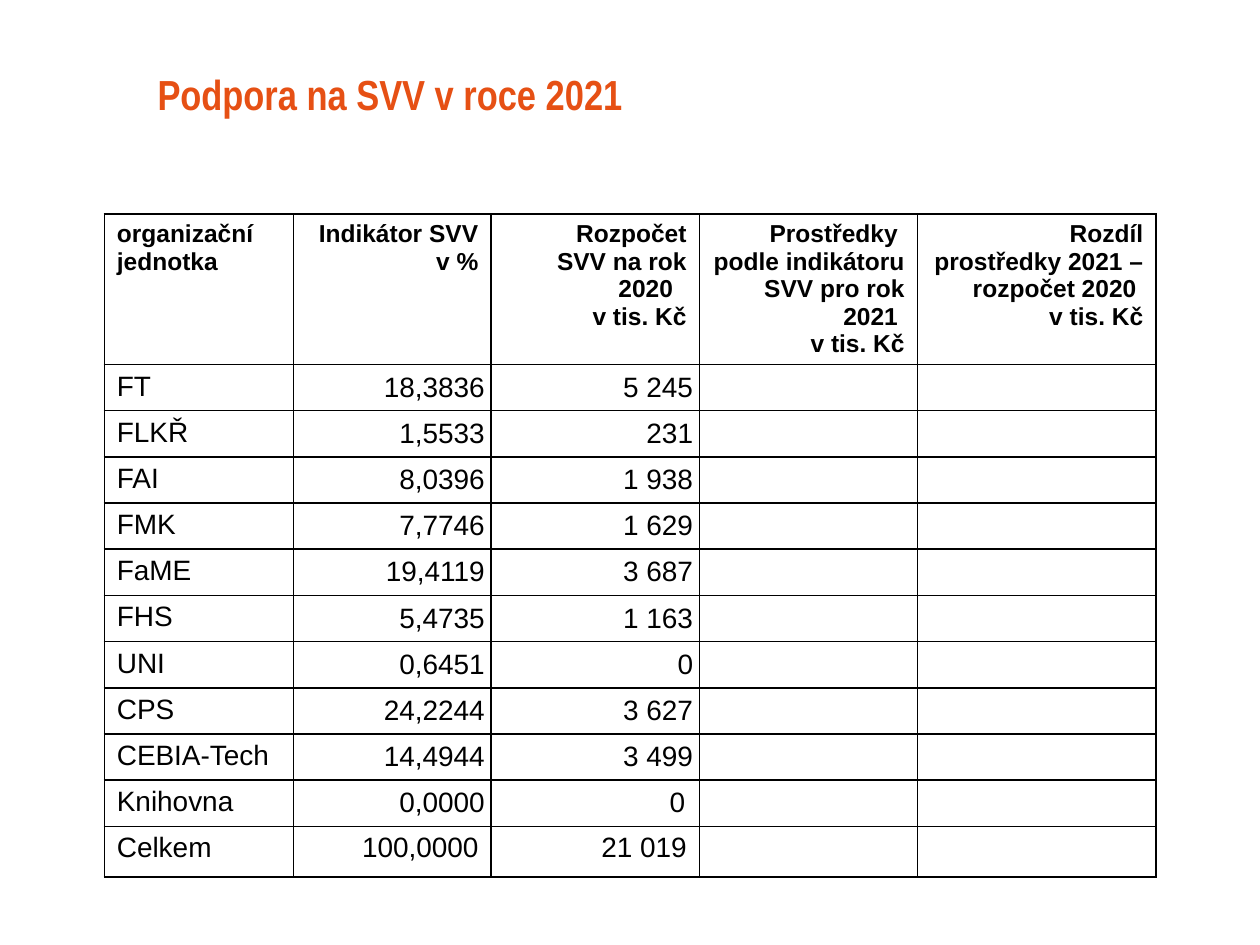
from lxml.etree import SubElement
from pptx import Presentation
from pptx.dml.color import RGBColor
from pptx.enum.text import MSO_ANCHOR, PP_ALIGN
from pptx.oxml.ns import qn
from pptx.util import Pt

COLORS = {"title": "E65014", "text": "000000", "border": "000000"}
COL_WIDTHS = [108, 113, 119, 124.6, 136.4]
HEADER_HEIGHT, ROW_HEIGHT, TOTAL_HEIGHT = 85.6, 26.4, 29

HEADERS = [
    "organizační jednotka",
    "Indikátor SVV\nv %",
    "Rozpočet\nSVV na rok 2020  \nv tis. Kč",
    "Prostředky  podle indikátoru SVV pro rok 2021 \nv tis. Kč",
    "Rozdíl\nprostředky 2021 – rozpočet 2020 \nv tis. Kč",
]
UNITS = [
    ("FT", "18,3836", "5 245"),
    ("FLKŘ", "1,5533", "231"),
    ("FAI", "8,0396", "1 938"),
    ("FMK", "7,7746", "1 629"),
    ("FaME", "19,4119", "3 687"),
    ("FHS", "5,4735", "1 163"),
    ("UNI", "0,6451", "0"),
    ("CPS", "24,2244", "3 627"),
    ("CEBIA-Tech", "14,4944", "3 499"),
    ("Knihovna", "0,0000", "0 "),
    ("Celkem", "100,0000", "21 019"),
]


def set_font(p, name, size, bold, color):
    p.font.name = name
    p.font.size = Pt(size)
    p.font.bold = bold
    p.font.color.rgb = RGBColor.from_string(COLORS[color])


def add_borders(cell):
    """Draw a 1 pt line on all four sides; must run before the fill is set."""
    tc_pr = cell._tc.get_or_add_tcPr()
    for side in ("a:lnL", "a:lnR", "a:lnT", "a:lnB"):
        ln = SubElement(tc_pr, qn(side), w=str(Pt(1)))
        fill = SubElement(ln, qn("a:solidFill"))
        SubElement(fill, qn("a:srgbClr"), val=COLORS["border"])


prs = Presentation()
prs.slide_width, prs.slide_height = Pt(720), Pt(540)
s = prs.slides.add_slide(prs.slide_layouts[5])

# Title
title = s.shapes.title
title.left, title.top, title.width, title.height = Pt(82.8), Pt(26), Pt(621.4), Pt(54.7)
tf = title.text_frame
tf.text = "Podpora na SVV v roce 2021"
tf.vertical_anchor = MSO_ANCHOR.MIDDLE
p = tf.paragraphs[0]
p.alignment = PP_ALIGN.LEFT
set_font(p, "Arial Narrow", 24, True, "title")

# Budget table
rows = [HEADERS] + [unit + ("", "") for unit in UNITS]
heights = [HEADER_HEIGHT] + [ROW_HEIGHT] * (len(UNITS) - 1) + [TOTAL_HEIGHT]
table = s.shapes.add_table(
    len(rows), len(COL_WIDTHS), Pt(59.6), Pt(122.4), Pt(sum(COL_WIDTHS)), Pt(sum(heights))
).table
table.first_row = table.horz_banding = False
for column, width in zip(table.columns, COL_WIDTHS):
    column.width = Pt(width)

for i, (values, height) in enumerate(zip(rows, heights)):
    table.rows[i].height = Pt(height)
    is_header = i == 0
    for j, value in enumerate(values):
        cell = table.cell(i, j)
        add_borders(cell)
        cell.fill.background()
        roomy = is_header or j == 0 or (i == len(rows) - 1 and value)
        cell.margin_left = cell.margin_right = Pt(7.2 if roomy else 3.6)
        cell.margin_top = cell.margin_bottom = Pt(3.6 if roomy else 0)
        cell.vertical_anchor = MSO_ANCHOR.TOP if roomy else MSO_ANCHOR.MIDDLE
        cell.text = value
        for p in cell.text_frame.paragraphs:
            p.alignment = PP_ALIGN.LEFT if j == 0 else PP_ALIGN.RIGHT
            set_font(p, "Arial", 14 if is_header else 16, is_header, "text")

prs.save("out.pptx")
